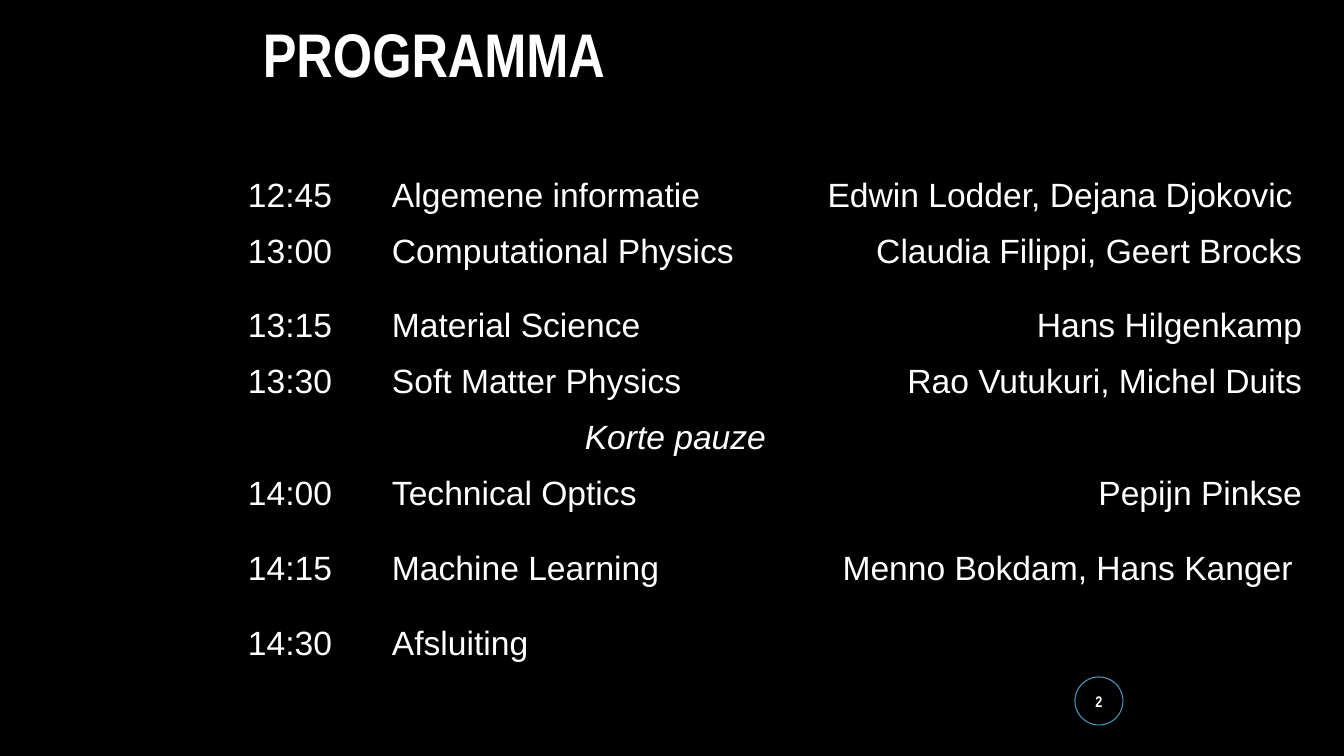
from pptx import Presentation
from pptx import util as u
from pptx.dml.color import RGBColor
from pptx.enum import shapes, text

PX = 914400 / 100.8
COLORS = {"background": "000000", "text": "FFFFFF", "ring": "469BC0"}
NO_STYLE = "{2D5ABB26-0587-4C30-8999-92F81FD0307C}"
LEFT, CENTER, RIGHT = text.PP_ALIGN.LEFT, text.PP_ALIGN.CENTER, text.PP_ALIGN.RIGHT

COLUMN_WIDTHS = [144, 388, 536]
COLUMN_ALIGNS = [LEFT, LEFT, RIGHT]
PROGRAMMA = [
    (70, "", "", ""),
    (56, "12:45", "Algemene informatie", "Edwin Lodder, Dejana Djokovic "),
    (74, "13:00", "Computational Physics", "Claudia Filippi, Geert Brocks"),
    (56, "13:15", "Material Science", "Hans Hilgenkamp"),
    (56, "13:30", "Soft Matter Physics", "Rao Vutukuri, Michel Duits"),
    (56, "", "Korte pauze", ""),
    (75, "14:00", "Technical Optics", "Pepijn Pinkse"),
    (75, "14:15", "Machine Learning", "Menno Bokdam, Hans Kanger "),
    (72, "14:30", "Afsluiting", ""),
]


def px(n):
    return u.Emu(round(n * PX))


def color(name):
    return RGBColor.from_string(COLORS[name])


def apply(target, values):
    for name, value in values.items():
        setattr(target, name, value)


class Deck:
    heading = {"name": "Arial Narrow", "size": u.Pt(44), "bold": True}
    number = {"name": "Arial Narrow", "size": u.Pt(11), "bold": True}
    body = {"name": "Arial", "size": u.Pt(24)}
    pause = {**body, "italic": True}

    def __init__(self, prs):
        self.s = prs.slides.add_slide(prs.slide_layouts[6])
        self.paint(self.s.background, "background")

    def paint(self, target, name):
        target.fill.solid()
        target.fill.fore_color.rgb = color(name)

    def put_text(self, tf, words, font, align=LEFT, spacing=1.0):
        p = tf.paragraphs[0]
        apply(p, {"alignment": align, "line_spacing": spacing})
        r = p.add_run()
        r.text = words
        apply(r.font, font)
        r.font.color.rgb = color("text")

    def title(self, words, *box):
        sp = self.s.shapes.add_textbox(*map(px, box))
        self.paint(sp, "background")
        sp.text_frame.word_wrap = True
        self.put_text(sp.text_frame, words, self.heading, spacing=0.9)

    def badge(self, words, *box):
        sp = self.s.shapes.add_shape(shapes.MSO_SHAPE.OVAL, *map(px, box))
        sp.shadow.inherit = False
        self.paint(sp, "background")
        sp.line.color.rgb = color("ring")
        sp.line.width = u.Pt(0.75)
        tf = sp.text_frame
        apply(tf, {"margin_left": 0, "margin_right": 0, "margin_top": 0,
                   "margin_bottom": 0, "vertical_anchor": text.MSO_ANCHOR.MIDDLE})
        self.put_text(tf, words, self.number, CENTER)

    def schedule(self, rows, left, top):
        width, height = sum(COLUMN_WIDTHS), sum(row[0] for row in rows)
        frame = self.s.shapes.add_table(len(rows), len(COLUMN_WIDTHS),
                                        *map(px, (left, top, width, height)))
        table = frame.table
        table._tbl.tblPr[0].text = NO_STYLE
        apply(table, {"first_row": False, "horz_banding": False})
        for column, column_width in zip(table.columns, COLUMN_WIDTHS):
            column.width = px(column_width)
        for row, (row_height, *entries) in zip(table.rows, rows):
            row.height = px(row_height)
            is_pause = not entries[0]
            for cell, words, align in zip(row.cells, entries, COLUMN_ALIGNS):
                cell.fill.background()
                apply(cell, {"margin_left": px(7), "margin_right": px(7),
                             "margin_top": 0, "margin_bottom": 0})
                if words:
                    self.put_text(cell.text_frame, words,
                                  self.pause if is_pause else self.body,
                                  RIGHT if is_pause else align)


def main():
    prs = Presentation()
    apply(prs, {"slide_width": px(1344), "slide_height": px(756)})
    deck = Deck(prs)
    deck.title("PROGRAMMA", 253, 19, 1045, 183)
    deck.badge("2", 1075, 677, 48, 48)
    deck.schedule(PROGRAMMA, 241, 107)
    prs.save("out.pptx")


if __name__ == "__main__":
    main()
